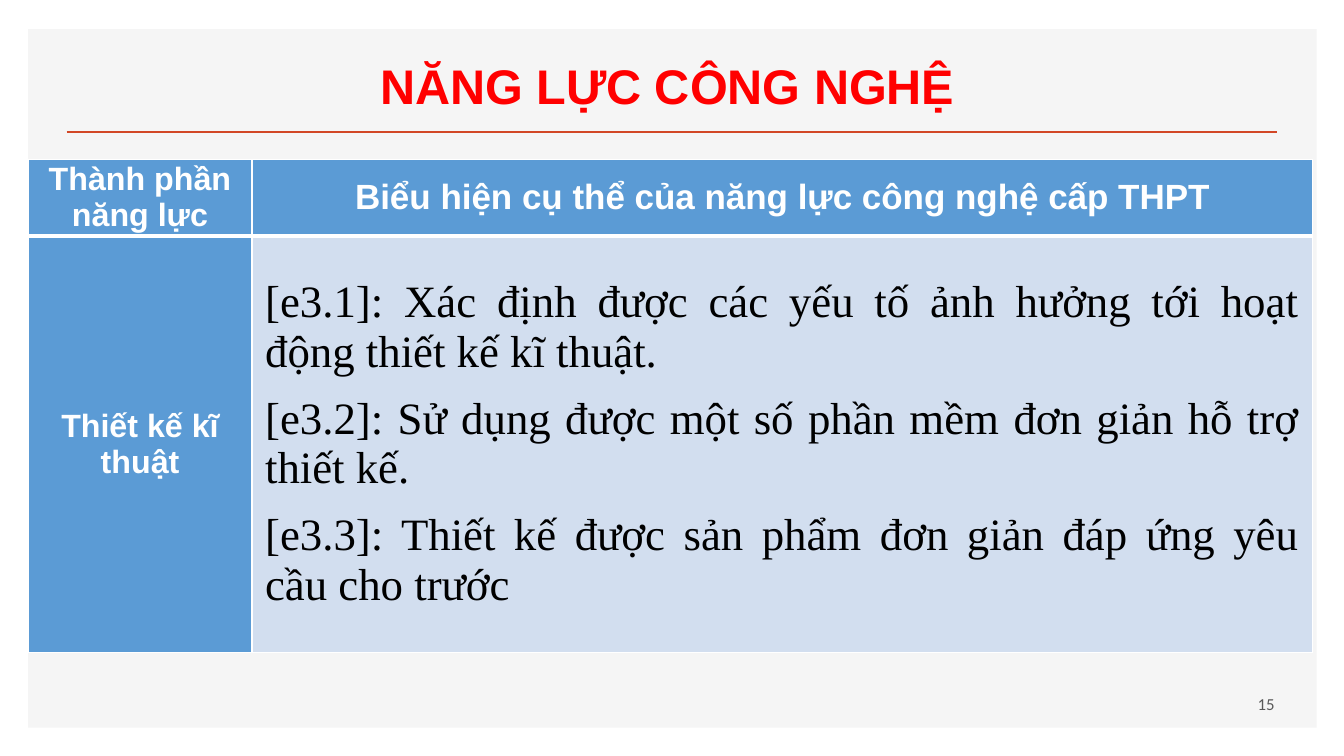
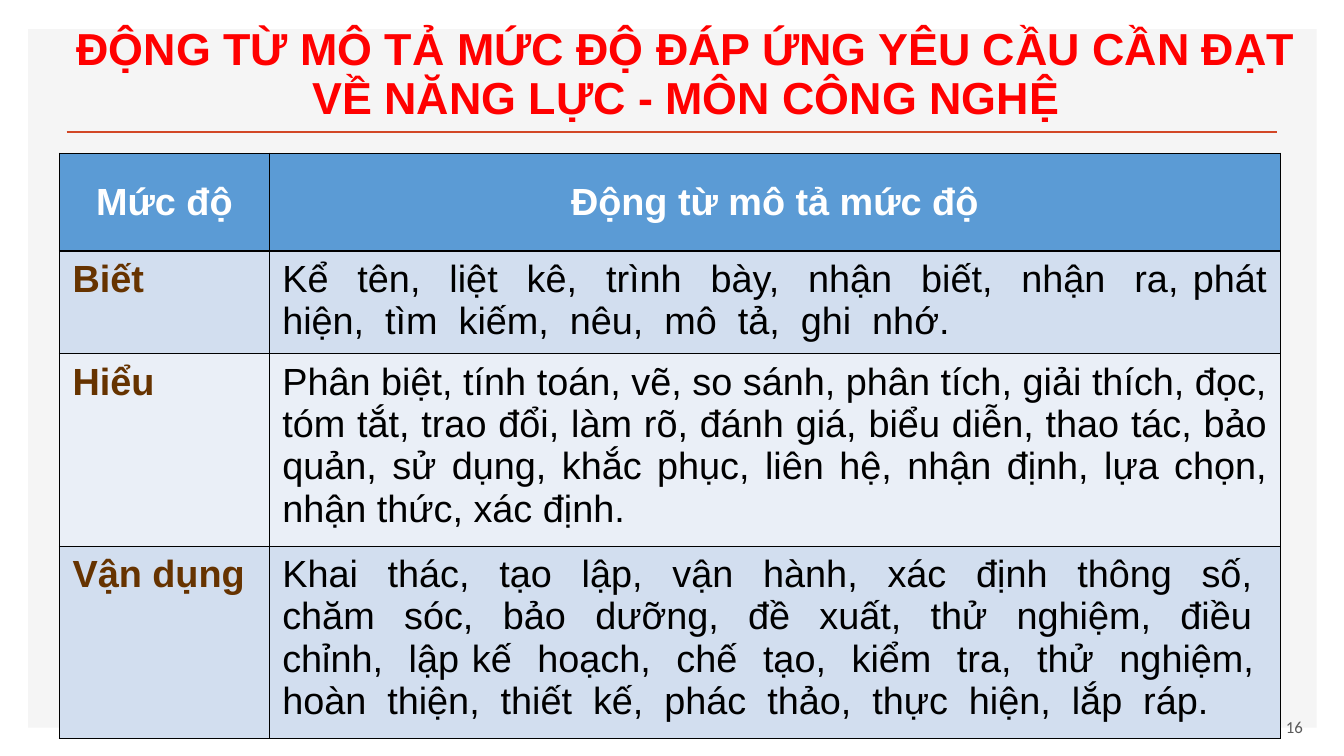
"""Build two slides on technology competence, each with a titled table."""
from dataclasses import dataclass

from lxml.etree import SubElement
from pptx import Presentation
from pptx.dml.color import RGBColor as Rgb
from pptx.enum.shapes import MSO_CONNECTOR as Link, MSO_SHAPE as Form
from pptx.enum.text import MSO_ANCHOR as Anchor, MSO_AUTO_SIZE as Fit, PP_ALIGN as Align
from pptx.oxml import parse_xml
from pptx.oxml.ns import nsdecls, qn
from pptx.util import Emu, Pt

SCALE = 9144


@dataclass(frozen=True)
class Theme:
    panel: str = "F5F5F5"
    rule: str = "D24726"
    title: str = "FF0000"
    head: str = "5B9BD5"
    dark: str = "D2DEEF"
    light: str = "EAEFF7"
    white: str = "FFFFFF"
    black: str = "000000"
    brown: str = "663300"
    grey: str = "595959"
    sans: str = "Arial"
    serif: str = "Times New Roman"
    foot: str = "Calibri"
    small: float = 12
    label: float = 23
    wide: float = 25
    text: float = 27
    big: float = 32
    large: float = 34.7


T = Theme()


@dataclass(frozen=True)
class Box:
    x: int
    y: int
    w: int
    h: int

    def emu(self) -> tuple:
        return tuple(px(n) for n in (self.x, self.y, self.w, self.h))


@dataclass(frozen=True)
class Style:
    size: float
    color: str
    font: str = T.sans
    bold: bool = True
    align: Align = Align.CENTER
    gap: float = 0
    line: float = 1.0


@dataclass(frozen=True)
class Cell:
    lines: tuple
    style: Style
    fill: str = T.head
    pad: tuple = (2, 0)
    anchor: Anchor = Anchor.MIDDLE


@dataclass(frozen=True)
class Grid:
    box: Box
    cols: tuple
    rows: tuple
    cells: tuple
    edge: str
    under: int = 1


@dataclass(frozen=True)
class Page:
    title: str
    size: float
    top: Box
    grid: Grid
    number: str
    foot: Box


def px(n: int) -> Emu:
    return Emu(n * SCALE)


def put(item, vals: dict) -> None:
    for name, val in vals.items():
        setattr(item, name, val)


def pads(x: int, y: int) -> dict:
    return {"margin_left": px(x), "margin_right": px(x),
            "margin_top": px(y), "margin_bottom": px(y)}


def write(frame, lines: tuple, look: Style) -> None:
    for i, line in enumerate(lines):
        para = frame.add_paragraph() if i else frame.paragraphs[0]
        put(para, {"alignment": look.align, "line_spacing": look.line,
                   "space_before": Pt(look.gap), "space_after": Pt(look.gap)})
        run = para.add_run()
        run.text = line
        put(run.font, {"name": look.font, "size": Pt(look.size), "bold": look.bold})
        run.font.color.rgb = Rgb.from_string(look.color)


def place(shape, box: Box) -> None:
    put(shape, dict(zip(("left", "top", "width", "height"), box.emu())))


def edges(cell, color: str, top: int, base: int) -> None:
    prop = cell._tc.get_or_add_tcPr()
    for i, (side, wide) in enumerate(zip("LRTB", (1, 1, top, base))):
        prop.insert(i, parse_xml(
            f'<a:ln{side} {nsdecls("a")} w="{Pt(wide)}"><a:solidFill>'
            f'<a:srgbClr val="{color}"/></a:solidFill></a:ln{side}>'))


def draw(slide, grid: Grid) -> None:
    table = slide.shapes.add_table(len(grid.rows), len(grid.cols), *grid.box.emu()).table
    table.horz_banding = False
    for col, wide in zip(table.columns, grid.cols):
        col.width = px(wide)
    for r, (row, high) in enumerate(zip(table.rows, grid.rows)):
        row.height = px(high)
        for cell, data in zip(row.cells, grid.cells[r]):
            put(cell, {**pads(*data.pad), "vertical_anchor": data.anchor})
            cell.fill.solid()
            cell.fill.fore_color.rgb = Rgb.from_string(data.fill)
            edges(cell, grid.edge, grid.under if r == 1 else 1, 1 if r else grid.under)
            write(cell.text_frame, data.lines, data.style)


def frame(slide, layout) -> None:
    panel = slide.shapes.add_shape(Form.RECTANGLE, *Box(28, 29, 1278, 693).emu())
    panel.shadow.inherit = False
    panel.fill.solid()
    panel.fill.fore_color.rgb = Rgb.from_string(T.panel)
    panel.line.fill.background()
    rule = slide.shapes.add_connector(Link.STRAIGHT, px(66), px(131), px(1267), px(131))
    rule.line.color.rgb = Rgb.from_string(T.rule)
    rule.line.width = Pt(2)
    SubElement(rule.element.spPr, qn("a:effectLst"))
    for i, part in enumerate((panel, rule)):
        part.element[0][0].set("id", str(50 + i))
        layout.shapes.element.insert(2 + i, part.element)


def build(slide, page: Page) -> None:
    head = slide.shapes.title
    place(head, page.top)
    put(head.text_frame, {**pads(10, 5), "word_wrap": True, "auto_size": Fit.NONE,
                          "vertical_anchor": Anchor.BOTTOM})
    write(head.text_frame, (page.title,), Style(page.size, T.title, line=0.9))
    draw(slide, page.grid)
    foot = slide.shapes.add_textbox(*page.foot.emu()).text_frame
    put(foot, {**pads(10, 5), "word_wrap": True, "vertical_anchor": Anchor.MIDDLE})
    write(foot, (page.number,), Style(T.small, T.grey, T.foot, False, Align.RIGHT))


def label(text: str, size: float) -> Cell:
    return Cell((text,), Style(size, T.white, gap=3))


def level(name: str, verbs: str, fill: str) -> tuple:
    looks = (Style(T.text, T.brown, align=Align.LEFT),
             Style(T.text, T.black, bold=False, align=Align.JUSTIFY))
    return tuple(Cell((text,), look, fill, (13, 7), Anchor.TOP)
                 for text, look in zip((name, verbs), looks))


SKILLS = Grid(
    Box(28, 158, 1274, 489), (222, 1052), (76, 413),
    ((label("Thành phần năng lực", T.label),
      label("Biểu hiện cụ thể của năng lực công nghệ cấp THPT", T.wide)),
     (label("Thiết kế kĩ thuật", T.label),
      Cell(("[e3.1]: Xác định được các yếu tố ảnh hưởng tới hoạt động thiết kế kĩ thuật.",
            "[e3.2]: Sử dụng được một số phần mềm đơn giản hỗ trợ thiết kế.",
            "[e3.3]: Thiết kế được sản phẩm đơn giản đáp ứng yêu cầu cho trước"),
           Style(T.big, T.black, T.serif, False, Align.JUSTIFY, 6), T.dark, (13, 7)))),
    T.white, 3)

VERBS = Grid(
    Box(59, 152, 1211, 581), (208, 1003), (97, 102, 191, 191),
    ((label("Mức độ", T.text), label("Động từ mô tả mức độ", T.text)),
     level("Biết",
           "Kể  tên,  liệt  kê,  trình  bày,  nhận  biết,  nhận  ra, phát hiện,  tìm  kiếm,  "
           "nêu,  mô  tả,  ghi  nhớ.", T.dark),
     level("Hiểu",
           "Phân biệt, tính toán, vẽ, so sánh, phân tích, giải thích, đọc, tóm tắt, trao đổi, "
           "làm rõ, đánh giá, biểu diễn, thao tác, bảo quản, sử dụng, khắc phục, liên hệ, "
           "nhận định, lựa chọn, nhận thức, xác định.", T.light),
     level("Vận dụng",
           "Khai  thác,  tạo  lập,  vận  hành,  xác  định  thông  số,  chăm  sóc,  bảo  dưỡng,  "
           "đề  xuất,  thử  nghiệm,  điều  chỉnh,  lập kế  hoạch,  chế  tạo,  kiểm  tra,  "
           "thử  nghiệm,  hoàn  thiện,  thiết  kế,  phác  thảo,  thực  hiện,  lắp  ráp.", T.dark)),
    T.black)

PAGES = (
    Page("NĂNG LỰC CÔNG NGHỆ", T.large, Box(57, 49, 1210, 70), SKILLS,
         "15", Box(916, 678, 358, 40)),
    Page("ĐỘNG TỪ MÔ TẢ MỨC ĐỘ ĐÁP ỨNG YÊU CẦU CẦN ĐẠT VỀ NĂNG LỰC - MÔN CÔNG NGHỆ",
         T.big, Box(57, 14, 1247, 114), VERBS, "16", Box(944, 701, 358, 40)),
)


def main() -> None:
    deck = Presentation()
    put(deck, {"slide_width": px(1333), "slide_height": px(750)})
    layout = deck.slide_layouts[5]
    for i, page in enumerate(PAGES):
        slide = deck.slides.add_slide(layout)
        if i == 0:
            frame(slide, layout)
        build(slide, page)
    deck.save("out.pptx")


if __name__ == "__main__":
    main()
